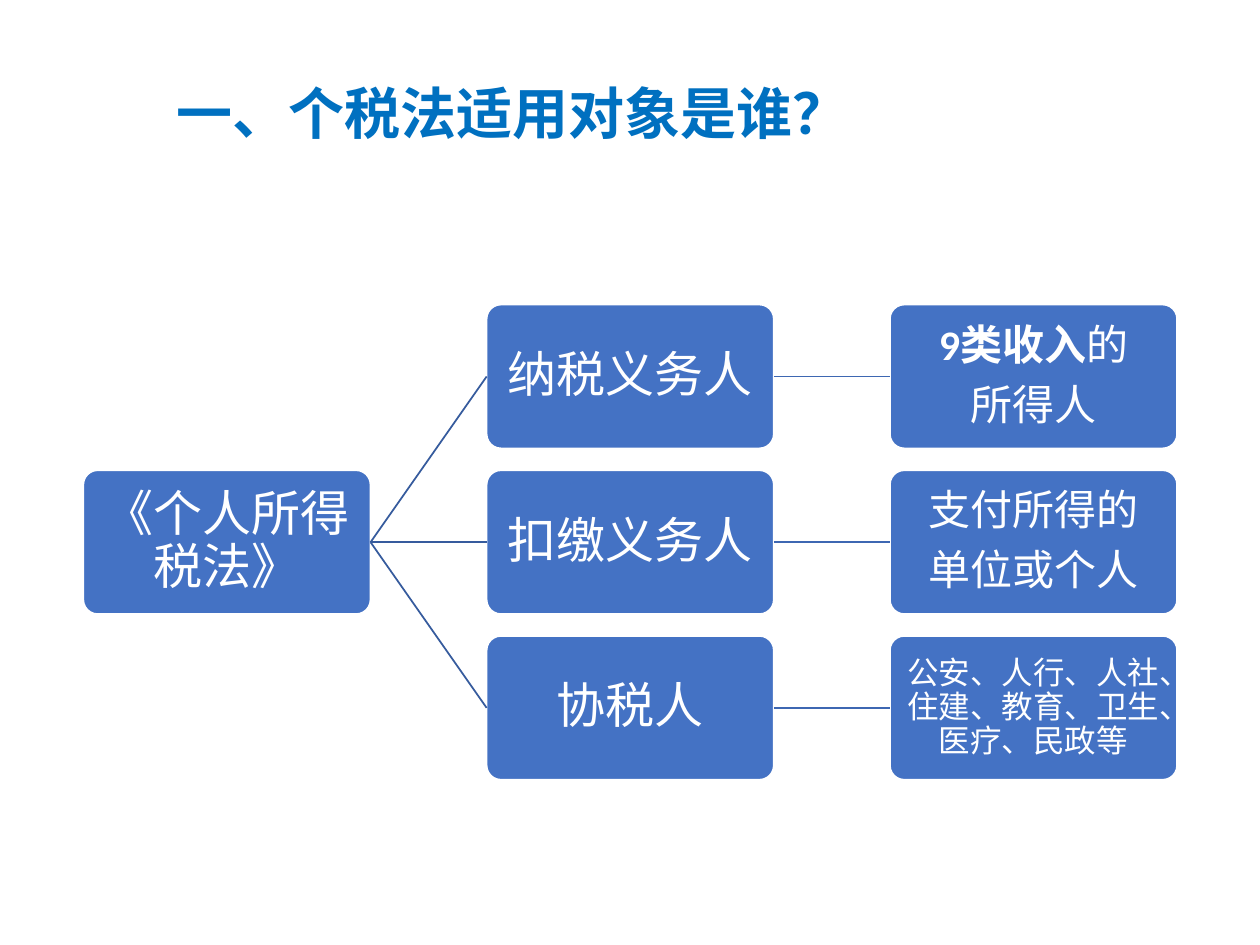
from lxml import etree
from pptx import Presentation
from pptx.dml.color import RGBColor
from pptx.enum.shapes import MSO_CONNECTOR, MSO_SHAPE
from pptx.enum.text import MSO_ANCHOR, MSO_AUTO_SIZE, PP_ALIGN
from pptx.oxml.ns import qn
from pptx.util import Cm, Pt

ROUNDED = MSO_SHAPE.ROUNDED_RECTANGLE
STRAIGHT = MSO_CONNECTOR.STRAIGHT
MIDDLE = MSO_ANCHOR.MIDDLE
NO_FIT = MSO_AUTO_SIZE.NONE
LEFT, CENTER = PP_ALIGN.LEFT, PP_ALIGN.CENTER
LEFT_SIDE, RIGHT_SIDE = 1, 3

COLORS = {
    "title": "0070C0",
    "box": "4472C4",
    "white": "FFFFFF",
    "branch": "365B9D",
    "detail": "3E67B2",
}
FIRST_LEFT, FIRST_TOP = 1.68, 6.14
COLUMN_STEP, ROW_STEP = 8.13, 3.34
BOX_WIDTH, BOX_HEIGHT = 5.79, 2.9

ROLES = [
    ("纳税义务人", [[("9类收入", True), ("的", False)], [("所得人", False)]], 24, 0.13),
    ("扣缴义务人", [[("支付所得的", False)], [("单位或个人", False)]], 24, 0.13),
    ("协税人", [[("公安、人行、人社、住建、教育、卫生、医疗、民政等", False)]], 18, 0.11),
]


class TreePage:
    title_font = "Noto Sans CJK SC"
    box_font = "Calibri"

    def __init__(self, deck):
        self.page = deck.slides.add_slide(deck.slide_layouts[5])

    def color(self, name):
        return RGBColor.from_string(COLORS[name])

    def title(self, text):
        box = self.page.shapes.title
        box.left, box.top, box.width, box.height = Cm(3.3), Cm(1.14), Cm(19.91), Cm(1.55)
        frame = box.text_frame
        frame.text = text
        frame.auto_size = NO_FIT
        frame.vertical_anchor = MIDDLE
        para = frame.paragraphs[0]
        para.alignment = LEFT
        para.line_spacing = 1.5
        para.font.name = self.title_font
        para.font.size = Pt(32)
        para.font.bold = True
        para.font.color.rgb = self.color("title")

    def box(self, column, row, paragraphs, size=28, inset=0.13):
        box = self.page.shapes.add_shape(
            ROUNDED,
            Cm(FIRST_LEFT + column * COLUMN_STEP),
            Cm(FIRST_TOP + row * ROW_STEP),
            Cm(BOX_WIDTH),
            Cm(BOX_HEIGHT),
        )
        box.adjustments[0] = 0.1
        box.shadow.inherit = False
        box.fill.solid()
        box.fill.fore_color.rgb = self.color("box")
        box.line.color.rgb = self.color("white")
        box.line.width = Pt(1)
        frame = box.text_frame
        frame.word_wrap = True
        frame.vertical_anchor = MIDDLE
        frame.margin_left = frame.margin_right = Cm(inset)
        frame.margin_top = frame.margin_bottom = Cm(inset)
        for index, spans in enumerate(paragraphs):
            para = frame.add_paragraph() if index else frame.paragraphs[0]
            para.alignment = CENTER
            para.line_spacing = 0.9
            para.space_after = Pt(size * 0.35)
            para.font.name = self.box_font
            para.font.size = Pt(size)
            para.font.color.rgb = self.color("white")
            for text, bold in spans:
                span = para.add_run()
                span.text = text
                if bold:
                    span.font.bold = True
        return box

    def link(self, start, end, color):
        line = self.page.shapes.add_connector(STRAIGHT, 0, 0, 0, 0)
        line.begin_connect(start, RIGHT_SIDE)
        line.end_connect(end, LEFT_SIDE)
        line.line.color.rgb = self.color(color)
        line.line.width = Pt(1)
        etree.SubElement(line._element.spPr, qn("a:effectLst"))


def main():
    deck = Presentation()
    deck.slide_width, deck.slide_height = Cm(25.4), Cm(19.05)
    tree = TreePage(deck)
    tree.title("一、个税法适用对象是谁？")
    law = tree.box(0, 1, [[("《个人所得税法》", False)]])
    for row, (name, details, size, inset) in enumerate(ROLES):
        role = tree.box(1, row, [[(name, False)]])
        detail = tree.box(2, row, details, size, inset)
        tree.link(law, role, "branch")
        tree.link(role, detail, "detail")
    deck.save("out.pptx")


if __name__ == "__main__":
    main()
